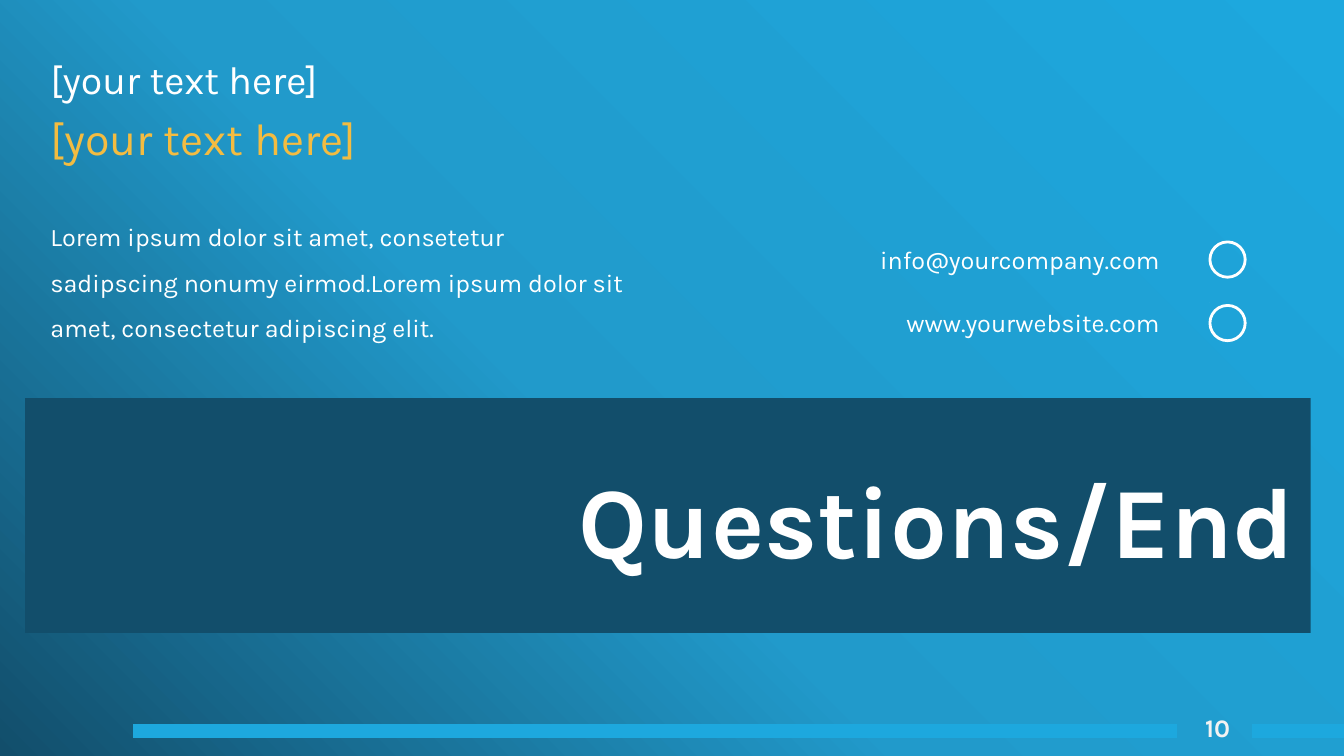
"""Closing slide with a title band, a short text and two contact lines."""
from copy import deepcopy
from math import sqrt
from lxml import etree
from pptx import Presentation
from pptx import util as u
from pptx.dml.color import RGBColor
from pptx.enum import shapes, text
from pptx.oxml.ns import qn

HUE = {"sky": "1DA8DE", "mid": "219ACB", "navy": "124E6B",
       "white": "FFFFFF", "pale": "F2F2F2", "gold": "F3BC41"}
TONE = {name: RGBColor.from_string(code) for name, code in HUE.items()}
ALIGN = text.PP_ALIGN
WIDE, HIGH = 13.33, 7.5

deck = Presentation()
deck.slide_width, deck.slide_height = u.Inches(WIDE), u.Inches(HIGH)
slide = deck.slides.add_slide(deck.slide_layouts[5])


def write(shape, area, lines, align=ALIGN.LEFT, inset=(0.1, 0.1), bold=False):
    """Place a text shape and fill it with (words, size, tone) lines."""
    shape.left, shape.top, shape.width, shape.height = map(u.Inches, area)
    frame = shape.text_frame
    frame.word_wrap = True
    frame.auto_size = text.MSO_AUTO_SIZE.NONE
    frame.vertical_anchor = text.MSO_ANCHOR.TOP
    frame.margin_left, frame.margin_right = map(u.Inches, inset)
    frame.margin_top = frame.margin_bottom = u.Inches(0.05)
    frame.text = "\n".join(words for words, size, tone in lines)
    for para, (words, size, tone) in zip(frame.paragraphs, lines):
        para.alignment = align
        para.font.name, para.font.size, para.font.bold = "Karla", u.Pt(size), bold
        para.font.color.rgb = TONE[tone]
    return frame.paragraphs


def carve(rings):
    """Draw closed rings of points, in inches, as one white outline."""
    pen = slide.shapes.build_freeform(*rings[0][0], scale=u.Inches(1))
    for ring in rings:
        pen.move_to(*ring[0])
        pen.add_line_segments(ring[1:], close=True)
    icon = pen.convert_to_shape()
    icon.shadow.inherit = False
    icon.fill.solid()
    icon.fill.fore_color.rgb = TONE["white"]
    icon.line.fill.background()


fill = slide.background.fill
fill.gradient()
fill.gradient_angle = 225
stops = slide.element.xpath(".//a:gsLst")[0]
stops.append(deepcopy(stops[0]))
for stop, (tone, place) in zip(fill.gradient_stops,
                               [("sky", 0), ("mid", 0.57), ("navy", 1)]):
    stop.color.rgb, stop.position = TONE[tone], place

base = u.Inches(7.25)
for start, end in [(11.67, 1.32), (WIDE, 12.42)]:
    bar = slide.shapes.add_connector(shapes.MSO_CONNECTOR.STRAIGHT,
                                     u.Inches(start), base, u.Inches(end), base)
    bar.line.color.rgb, bar.line.width = TONE["sky"], u.Pt(10)
    etree.SubElement(bar.element.spPr, qn("a:effectLst"))

band = slide.shapes.add_shape(shapes.MSO_SHAPE.RECTANGLE,
                              *map(u.Inches, (0.25, 3.95, 12.75, 2.33)))
band.shadow.inherit = False
band.fill.solid()
band.fill.fore_color.rgb = TONE["navy"]
band.line.fill.background()

title = slide.shapes.title
band.element.addnext(title.element)
write(title, (5.64, 4.49, 7.91, 1.31), [("Questions/End", 72, "white")], bold=True)

new = slide.shapes.add_textbox
write(new(0, 0, 0, 0), (11.73, 7.02, 0.69, 0.4), [("10", 18, "pale")],
      ALIGN.CENTER, bold=True)
heads = write(new(0, 0, 0, 0), (0.5, 0.5, 11.04, 1.45),
              [("[your text here]", 28, "white"), ("[your text here]", 32, "gold")],
              inset=(0, 0.1))
heads[1].space_before = u.Pt(6)
body = write(new(0, 0, 0, 0), (0.5, 2, 5.72, 1.17),
             [("Lorem ipsum dolor sit amet, consetetur sadipscing nonumy "
               "eirmod.Lorem ipsum dolor sit amet, consectetur adipiscing elit.",
               18, "white")], inset=(0, 0))
body[0].line_spacing = 1.5

left, first, pitch, size = 12, 2.4, 0.63, 0.35
for row, words in enumerate(["info@yourcompany.com", "www.yourwebsite.com"]):
    top = first + row * pitch
    write(new(0, 0, 0, 0), (8, top - 0.03, 3.6, 0.4), [(words, 18, "white")],
          ALIGN.RIGHT)
    ring = slide.shapes.add_shape(shapes.MSO_SHAPE.OVAL,
                                  *map(u.Inches, (left, top, size, size)))
    ring.shadow.inherit = False
    ring.fill.background()
    ring.line.color.rgb, ring.line.width = TONE["white"], u.Pt(2)

midx, midy, half = left + size / 2, first + size / 2, 0.11
flap = [(-0.95, -0.07), (0.95, -0.07), (0, 0.01)]
pouch = [(-1, -0.05), (0, 0.03), (1, -0.05), (1, 0.07), (-1, 0.07)]
carve([[(midx + x * half, midy + y) for x, y in ring] for ring in (flap, pouch)])

gap, steps = 0.04, 6
spans = [(-1, -0.5 - gap), (-0.5 + gap, -gap), (gap, 0.5 - gap), (0.5 + gap, 1)]
cells = []
for low, high in spans:
    levels = [low + (high - low) * n / steps for n in range(steps + 1)]
    for west, east in spans:
        edge = [(west, y) for y in levels] + [(east, y) for y in levels[::-1]]
        cells.append([(midx + half * x * sqrt(1 - y * y), midy + pitch + half * y)
                      for x, y in edge])
carve(cells)

deck.save("out.pptx")
